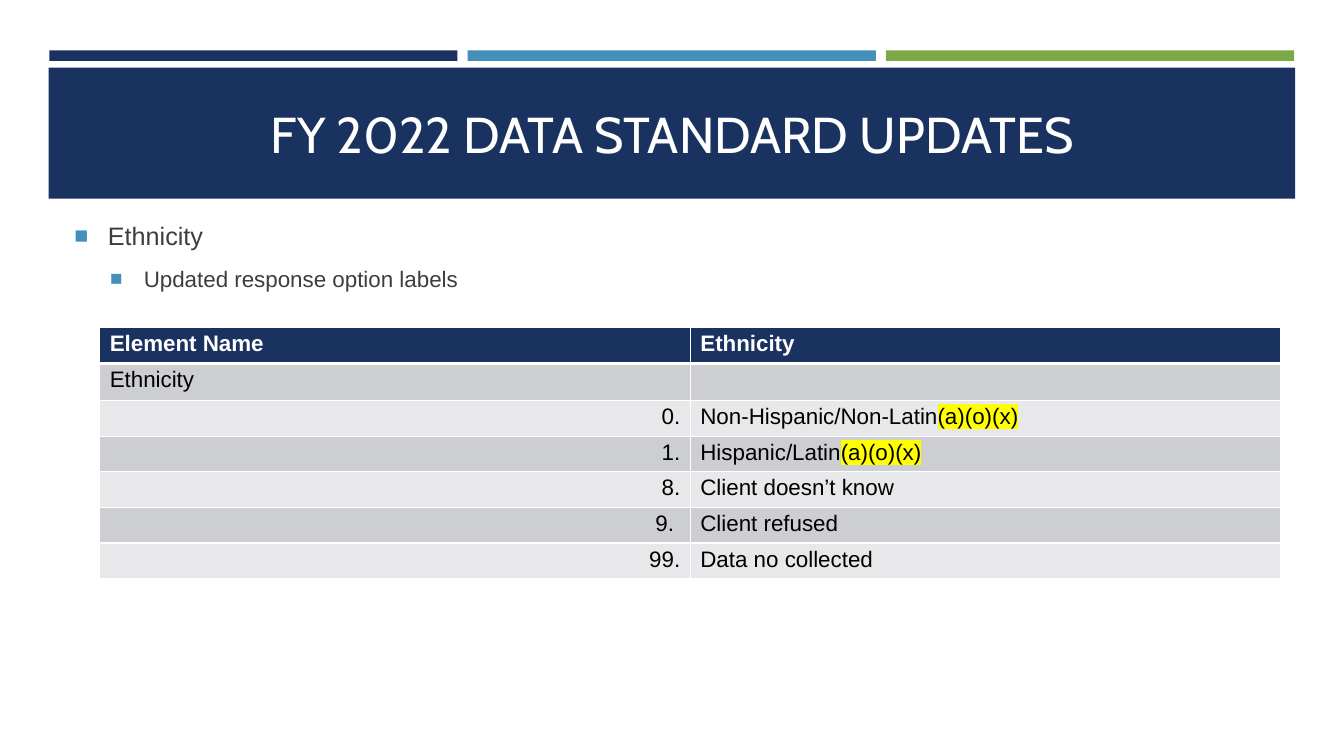
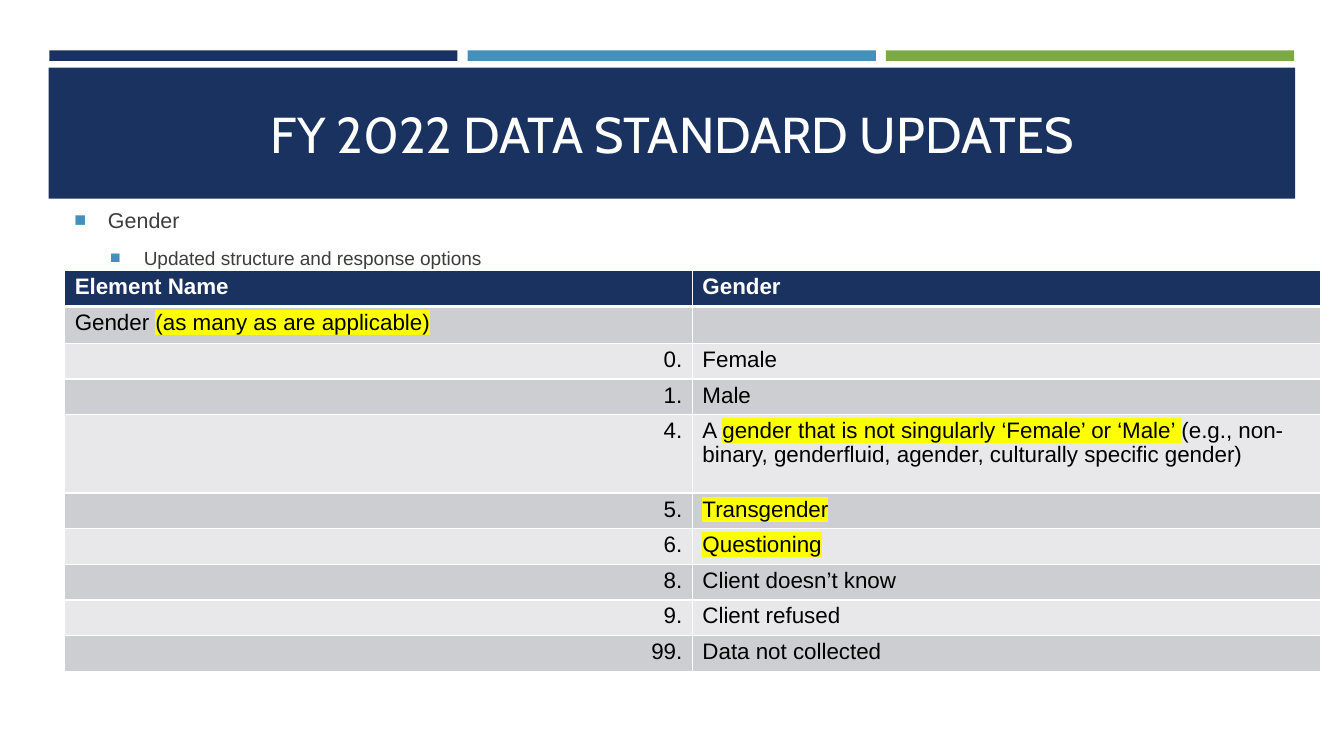
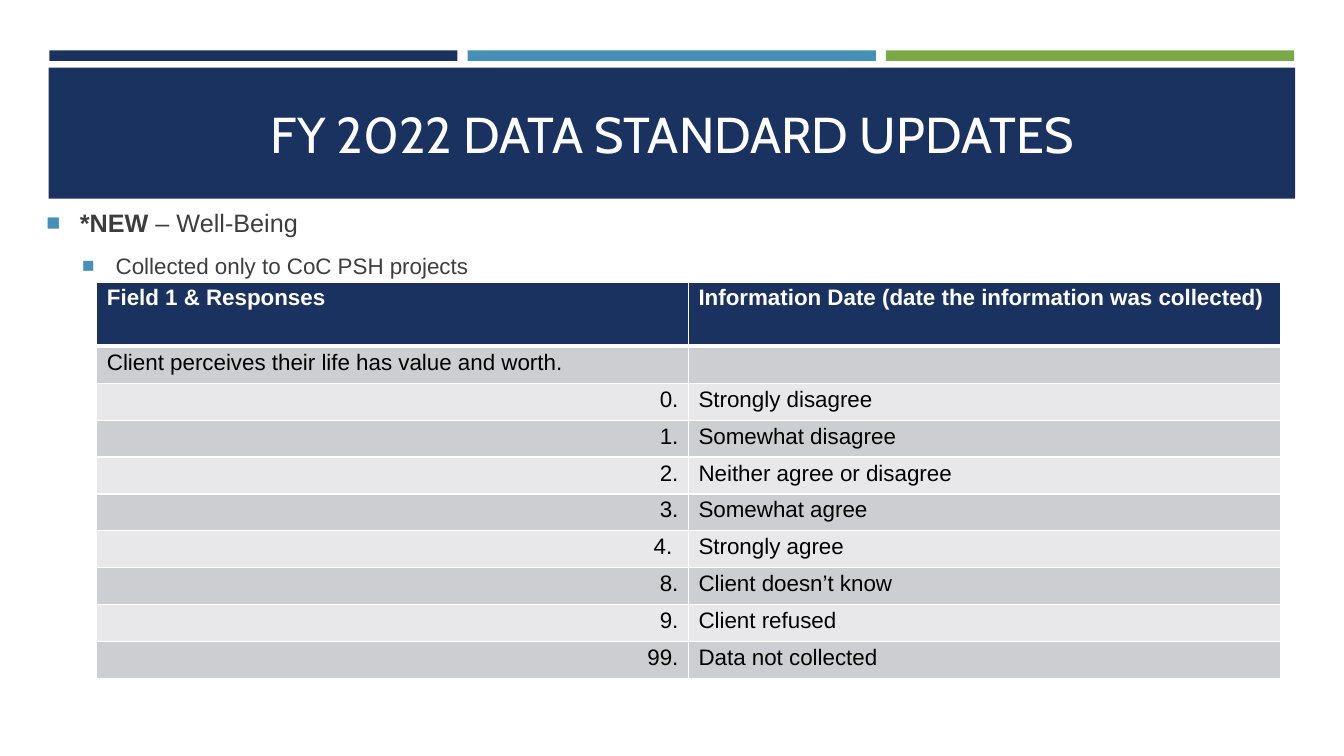
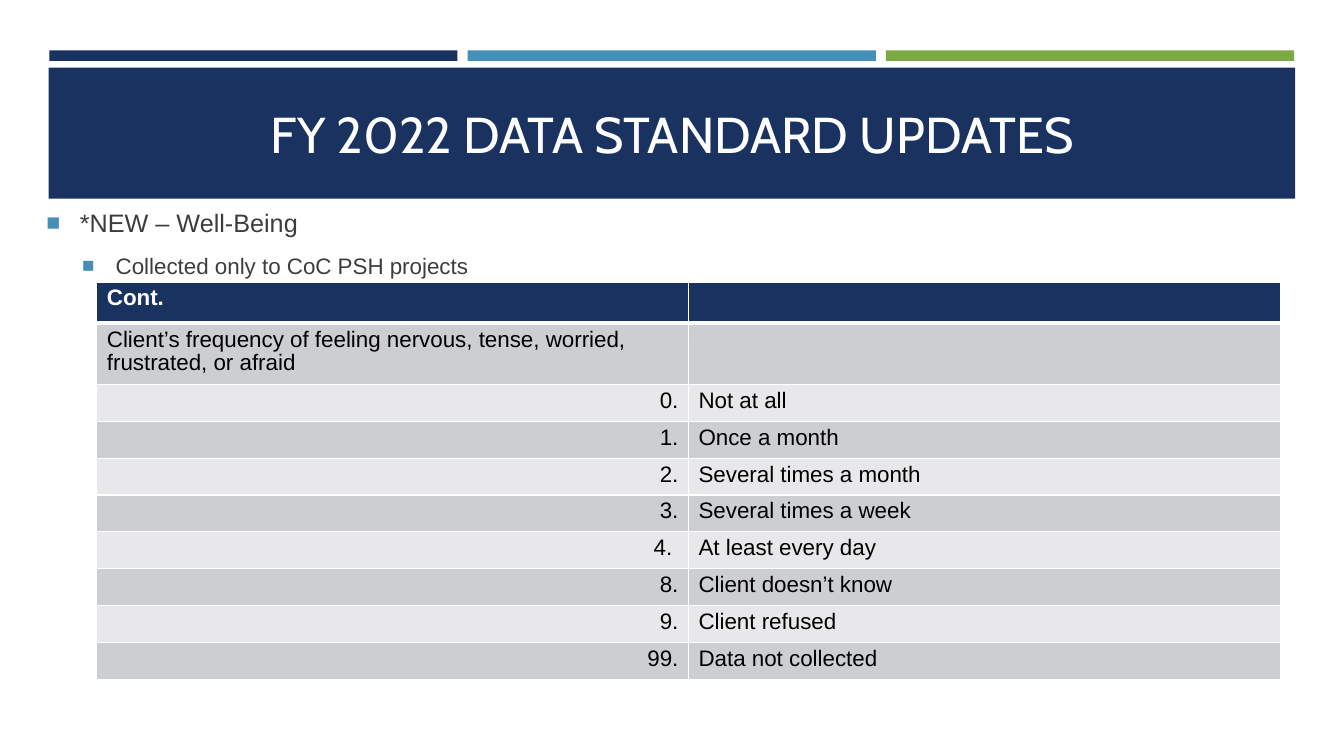
"""Builds the four FY 2022 data standard update slides."""
from lxml.etree import SubElement
from pptx import Presentation
from pptx.dml.color import RGBColor
from pptx.enum.shapes import MSO_SHAPE
from pptx.enum.text import MSO_ANCHOR, MSO_AUTO_SIZE, PP_ALIGN
from pptx.oxml.ns import qn
from pptx.util import Pt

NAVY, BLUE, GREEN = "1A3260", "4590B8", "7BA946"
WHITE, BLACK, GRAY, YELLOW = "FFFFFF", "000000", "3D3D3D", "FFFF00"
DARK_ROW, LIGHT_ROW = "CDCED2", "E8E8EA"
TITLE_FONT, BODY_FONT = "Cabin", "Arial"
TITLE = "FY 2022 DATA STANDARD UPDATES"
MARK, BOLD = "mark", "bold"

CLOSING_ROWS = [("8.", "Client doesn’t know"), ("9.", "Client refused"),
                ("99.", "Data not collected")]
LATIN_ENDING = ("(a)(o)(x)", MARK)
WELL_BEING = {"bullet_box": (26, 145.4, 316.8, 56.2), "bullet_sizes": (18, 16),
              "table_at": (69.2, 201.4), "column_width": 422.6, "row_height": 26.35}

SLIDES = [
    {"bullets": ["Ethnicity", "Updated response option labels"],
     "bullet_box": (46, 149, 868.4, 67.7), "bullet_sizes": (18, 16),
     "table_at": (71.2, 234.2), "column_width": 421.9, "row_height": 25.1, "tall_rows": {},
     "rows": [("Element Name", "Ethnicity"),
              ("Ethnicity", ""),
              ("0.", [("Non-Hispanic/Non-Latin", None), LATIN_ENDING]),
              ("1.", [("Hispanic/Latin", None), LATIN_ENDING]),
              ("8.", "Client doesn’t know"),
              ("9. ", "Client refused"),
              ("99.", "Data no collected")]},
    {"bullets": ["Gender", "Updated structure and response options"],
     "bullet_box": (46, 147.4, 868.4, 45.4), "bullet_sizes": (15.3, 13.6),
     "table_at": (46.2, 193.4), "column_width": 448.4, "row_height": 25.1,
     "tall_rows": {4: 56},
     "rows": [("Element Name", "Gender"),
              ([("Gender ", None), ("(as many as are applicable)", MARK)], ""),
              ("0.", "Female"),
              ("1.", "Male"),
              ("4.", [("A ", None),
                      ("gender that is not singularly ‘Female’ or ‘Male’ ", MARK),
                      ("(e.g., non-binary, genderfluid, agender, "
                       "culturally specific gender)", None)]),
              ("5.", [("Transgender", MARK)]),
              ("6.", [("Questioning", MARK)]),
              *CLOSING_ROWS]},
    {**WELL_BEING,
     "bullets": [[("*NEW ", BOLD), ("– Well-Being", None)],
                 "Collected only to CoC PSH projects"],
     "tall_rows": {0: 46},
     "rows": [("Field 1 & Responses", "Information Date (date the information was collected)"),
              ("Client perceives their life has value and worth.", ""),
              ("0.", "Strongly disagree"),
              ("1.", "Somewhat disagree"),
              ("2.", "Neither agree or disagree"),
              ("3.", "Somewhat agree"),
              ("4. ", "Strongly agree"),
              *CLOSING_ROWS]},
    {**WELL_BEING,
     "bullets": ["*NEW – Well-Being", "Collected only to CoC PSH projects"],
     "tall_rows": {0: 29.5, 1: 42.2},
     "rows": [("Cont.", ""),
              ("Client’s frequency of feeling nervous, tense, worried, frustrated, or afraid", ""),
              ("0.", "Not at all"),
              ("1.", "Once a month"),
              ("2.", "Several times a month"),
              ("3.", "Several times a week"),
              ("4. ", "At least every day"),
              *CLOSING_ROWS]},
]


def color(value):
    return RGBColor.from_string(value)


def points(*lengths):
    return [Pt(length) for length in lengths]


def add_runs(paragraph, content, size, text_color, font=BODY_FONT, bold=False):
    pieces = [(content, None)] if isinstance(content, str) else content
    for text, style in pieces:
        if not text:
            SubElement(paragraph._p, qn("a:endParaRPr"), sz=str(int(size * 100)))
            continue
        run = paragraph.add_run()
        run.text = text
        run.font.size = Pt(size)
        run.font.name = font
        run.font.bold = bold or style == BOLD
        run.font.color.rgb = color(text_color)
        if style == MARK:
            properties = run.font._element
            highlight = SubElement(properties, qn("a:highlight"))
            SubElement(highlight, qn("a:srgbClr"), val=YELLOW)
            properties.find(qn("a:latin")).addprevious(highlight)


def add_bands(slide, layout):
    """Draw the shared bands and move them to the layout, behind its title."""
    bars = [(35.2 + 298.8 * index, 36, 291.6, 7.5, fill)
            for index, fill in enumerate((NAVY, BLUE, GREEN))]
    for *box, fill in bars + [(34.8, 48.4, 890.4, 93.6, NAVY)]:
        band = slide.shapes.add_shape(MSO_SHAPE.RECTANGLE, *points(*box))
        band.shadow.inherit = False
        band.fill.solid()
        band.fill.fore_color.rgb = color(fill)
        band.line.fill.background()
        layout.shapes.element.insert(2, band.element)


def set_title(slide):
    title = slide.shapes.title
    title.left, title.top, title.width, title.height = points(46, 55.6, 868.4, 80)
    frame = title.text_frame
    frame.auto_size = MSO_AUTO_SIZE.NONE
    frame.vertical_anchor = MSO_ANCHOR.MIDDLE
    paragraph = frame.paragraphs[0]
    paragraph.alignment = PP_ALIGN.CENTER
    add_runs(paragraph, TITLE, 36, WHITE, TITLE_FONT)


def add_bullet(paragraph, level):
    properties = paragraph._p.get_or_add_pPr()
    properties.set("marL", str(Pt(24 + 25.6 * level)))
    properties.set("indent", str(-Pt(24)))
    bullet_color = SubElement(properties, qn("a:buClr"))
    SubElement(bullet_color, qn("a:srgbClr"), val=BLUE)
    SubElement(properties, qn("a:buSzPct"), val="92000")
    SubElement(properties, qn("a:buFont"), typeface=BODY_FONT)
    SubElement(properties, qn("a:buChar"), char="■")


def add_bullets(slide, content):
    frame = slide.shapes.add_textbox(*points(*content["bullet_box"])).text_frame
    frame.word_wrap = True
    frame.vertical_anchor = MSO_ANCHOR.MIDDLE
    for level, (text, size) in enumerate(zip(content["bullets"], content["bullet_sizes"])):
        paragraph = frame.add_paragraph() if level else frame.paragraphs[0]
        paragraph.level = level
        paragraph.space_before = Pt(round(size * 0.28, 1))
        paragraph.space_after = Pt(6)
        add_bullet(paragraph, level)
        add_runs(paragraph, text, size, GRAY)


def style_cell(cell, row_index):
    properties = cell._tc.get_or_add_tcPr()
    widths = {"L": 1, "R": 1, "T": 3 if row_index == 1 else 1, "B": 1 if row_index else 3}
    for side, width in widths.items():
        border = SubElement(properties, qn(f"a:ln{side}"), w=str(Pt(width)))
        SubElement(SubElement(border, qn("a:solidFill")), qn("a:srgbClr"), val=WHITE)
    cell.fill.solid()
    row_fill = DARK_ROW if row_index % 2 else LIGHT_ROW
    cell.fill.fore_color.rgb = color(row_fill if row_index else NAVY)


def add_response_table(slide, content):
    rows = content["rows"]
    heights = [content["tall_rows"].get(index, content["row_height"])
               for index in range(len(rows))]
    width = content["column_width"]
    table = slide.shapes.add_table(
        len(rows), 2, *points(*content["table_at"], 2 * width, sum(heights))).table
    table.first_row = table.horz_banding = False
    for column in table.columns:
        column.width = Pt(width)
    for row_index, (texts, height) in enumerate(zip(rows, heights)):
        table.rows[row_index].height = Pt(height)
        for column_index, text in enumerate(texts):
            cell = table.cell(row_index, column_index)
            style_cell(cell, row_index)
            paragraph = cell.text_frame.paragraphs[0]
            paragraph.line_spacing = 0.95
            if row_index > 1 and column_index == 0:
                paragraph.alignment = PP_ALIGN.RIGHT
            is_header = row_index == 0
            add_runs(paragraph, text, 16, WHITE if is_header else BLACK, bold=is_header)


def main():
    presentation = Presentation()
    presentation.slide_width, presentation.slide_height = points(960, 540)
    layout = presentation.slide_layouts[5]
    for placeholder in list(layout.placeholders)[1:]:
        layout.shapes.element.remove(placeholder.element)
    for index, content in enumerate(SLIDES):
        slide = presentation.slides.add_slide(layout)
        if index == 0:
            add_bands(slide, layout)
        set_title(slide)
        add_bullets(slide, content)
        add_response_table(slide, content)
    presentation.save("out.pptx")


if __name__ == "__main__":
    main()
